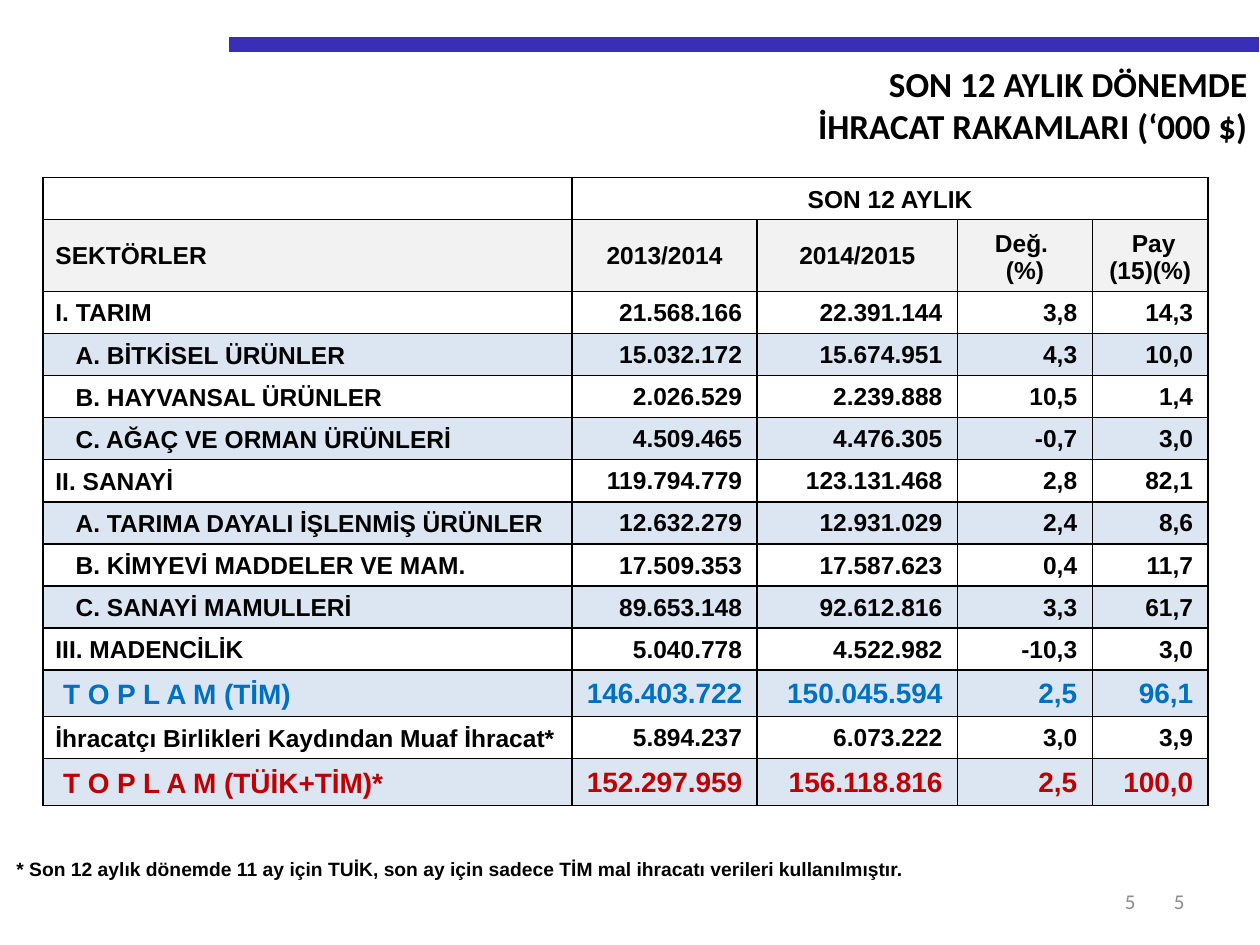
from dataclasses import dataclass

from lxml import etree
from pptx import Presentation
from pptx.dml.color import RGBColor
from pptx.enum.shapes import MSO_CONNECTOR
from pptx.enum.text import MSO_ANCHOR, PP_ALIGN
from pptx.oxml.ns import qn
from pptx.util import Inches, Pt

LEFT, CENTER, RIGHT = PP_ALIGN.LEFT, PP_ALIGN.CENTER, PP_ALIGN.RIGHT
TOP, MIDDLE, BOTTOM = MSO_ANCHOR.TOP, MSO_ANCHOR.MIDDLE, MSO_ANCHOR.BOTTOM
STRAIGHT = MSO_CONNECTOR.STRAIGHT

COLORS = {
    "text": "000000",
    "bar": "382EB8",
    "page_number": "8C8C8C",
    "white": "FFFFFF",
    "header": "F2F2F2",
    "band": "DCE6F2",
    "total_tim": "0070C0",
    "total_tuik": "C00000",
}

COLUMN_WIDTHS = [4.2, 1.47, 1.59, 1.07, 0.92]
TABLE_HEIGHT, HEADER_HEIGHT, TOTAL_HEIGHT = 4.97, 0.57, 0.37
LABEL_MARGINS = (0.1, 0.05, 0.1, 0.05)
VALUE_MARGINS = (0.01, 0.01, 0.12, 0)
NOTE_MARGINS = (0.01, 0.01, 0.01, 0)


@dataclass(frozen=True)
class SectorRow:
    label: str
    values: str
    indent: float = 0
    size: int = 14
    color: str = "text"


SUB_INDENT, TOTAL_INDENT = 0.16, 0.06
HEADINGS = ["SEKTÖRLER", "2013/2014", "2014/2015", "Değ. \n(%)", " Pay\n(15)(%)"]
SECTORS = [
    SectorRow("I. TARIM", "21.568.166 22.391.144 3,8 14,3"),
    SectorRow("A. BİTKİSEL ÜRÜNLER", "15.032.172 15.674.951 4,3 10,0", SUB_INDENT),
    SectorRow("B. HAYVANSAL ÜRÜNLER", "2.026.529 2.239.888 10,5 1,4", SUB_INDENT),
    SectorRow("C. AĞAÇ VE ORMAN ÜRÜNLERİ", "4.509.465 4.476.305 -0,7 3,0", SUB_INDENT),
    SectorRow("II. SANAYİ", "119.794.779 123.131.468 2,8 82,1"),
    SectorRow("A. TARIMA DAYALI İŞLENMİŞ ÜRÜNLER", "12.632.279 12.931.029 2,4 8,6", SUB_INDENT),
    SectorRow("B. KİMYEVİ MADDELER VE MAM.", "17.509.353 17.587.623 0,4 11,7", SUB_INDENT),
    SectorRow("C. SANAYİ MAMULLERİ", "89.653.148 92.612.816 3,3 61,7", SUB_INDENT),
    SectorRow("III. MADENCİLİK", "5.040.778 4.522.982 -10,3 3,0"),
    SectorRow("T O P L A M (TİM)", "146.403.722 150.045.594 2,5 96,1",
              TOTAL_INDENT, 16, "total_tim"),
    SectorRow("İhracatçı Birlikleri Kaydından Muaf İhracat*", "5.894.237 6.073.222 3,0 3,9"),
    SectorRow("T O P L A M (TÜİK+TİM)*", "152.297.959 156.118.816 2,5 100,0",
              TOTAL_INDENT, 16, "total_tuik"),
]


def rgb(name: str) -> RGBColor:
    return RGBColor.from_string(COLORS[name])


def write_text(frame, text: str, *, size: int = 14, font: str = "Arial",
               color: str = "text", bold: bool = True, align=LEFT) -> None:
    """Write one paragraph for each line of text."""
    for index, line in enumerate(text.split("\n")):
        para = frame.paragraphs[0] if index == 0 else frame.add_paragraph()
        para.alignment = align
        para.font.size = Pt(size)
        if line:
            span = para.add_run()
            span.text = line
            span.font.name = font
            span.font.size = Pt(size)
            span.font.bold = bold
            span.font.color.rgb = rgb(color)


def add_text(page, text: str, left: float, top: float, width: float, height: float,
             *, anchor=TOP, **text_format) -> None:
    box = page.shapes.add_textbox(Inches(left), Inches(top), Inches(width), Inches(height))
    box.text_frame.word_wrap = True
    box.text_frame.vertical_anchor = anchor
    write_text(box.text_frame, text, font="Calibri", align=RIGHT, **text_format)


def add_border(cell) -> None:
    properties = cell._tc.get_or_add_tcPr()
    for side in ("lnL", "lnR", "lnT", "lnB"):
        line = etree.SubElement(properties, qn(f"a:{side}"), w=str(Pt(1)))
        fill = etree.SubElement(line, qn("a:solidFill"))
        etree.SubElement(fill, qn("a:srgbClr"), val=COLORS["text"])


def fill_cell(cell, text: str, *, background: str = "white", anchor=MIDDLE,
              margins=LABEL_MARGINS, indent: float = 0, border: bool = True,
              **text_format) -> None:
    if border:
        add_border(cell)
    cell.fill.solid()
    cell.fill.fore_color.rgb = rgb(background)
    cell.vertical_anchor = anchor
    left, top, right, bottom = margins
    cell.margin_left, cell.margin_top = Inches(left + indent), Inches(top)
    cell.margin_right, cell.margin_bottom = Inches(right), Inches(bottom)
    write_text(cell.text_frame, text, **text_format)


def add_table(page, left: float, top: float, widths: list[float], heights: list[float]):
    table = page.shapes.add_table(
        len(heights), len(widths), Inches(left), Inches(top),
        Inches(sum(widths)), Inches(sum(heights))).table
    table.first_row = table.horz_banding = False
    for column, width in zip(table.columns, widths):
        column.width = Inches(width)
    for row, height in zip(table.rows, heights):
        row.height = Inches(height)
    return table


def add_export_table(page) -> None:
    total_count = sum(sector.size == 16 for sector in SECTORS)
    plain_count = len(SECTORS) - total_count + 1
    plain_height = (TABLE_HEIGHT - HEADER_HEIGHT - total_count * TOTAL_HEIGHT) / plain_count
    heights = [plain_height, HEADER_HEIGHT] + [
        TOTAL_HEIGHT if sector.size == 16 else plain_height for sector in SECTORS]
    table = add_table(page, 0.34, 1.41, COLUMN_WIDTHS, heights)

    table.cell(0, 1).merge(table.cell(0, len(COLUMN_WIDTHS) - 1))
    for column in range(len(COLUMN_WIDTHS)):
        fill_cell(table.cell(0, column), "SON 12 AYLIK" if column == 1 else "",
                  anchor=BOTTOM, align=CENTER)
    for column, heading in enumerate(HEADINGS):
        fill_cell(table.cell(1, column), heading, background="header",
                  anchor=BOTTOM if "\n" in heading else MIDDLE,
                  align=CENTER if column else LEFT)
    for index, sector in enumerate(SECTORS):
        shared = {"background": "band" if index % 2 else "white",
                  "size": sector.size, "color": sector.color}
        fill_cell(table.cell(index + 2, 0), sector.label, anchor=BOTTOM,
                  indent=sector.indent, **shared)
        for column, value in enumerate(sector.values.split(), start=1):
            fill_cell(table.cell(index + 2, column), value, margins=VALUE_MARGINS,
                      align=RIGHT, **shared)


def add_footnote(page) -> None:
    table = add_table(page, 0.12, 6.74, [7.4], [0.31, 0.31])
    note = ("* Son 12 aylık dönemde 11 ay için TUİK, son ay için sadece TİM "
            "mal ihracatı verileri kullanılmıştır.")
    for row, text in enumerate([note, ""]):
        fill_cell(table.cell(row, 0), text, margins=NOTE_MARGINS, border=False, size=11)


def add_top_bar(page) -> None:
    bar = page.shapes.add_connector(
        STRAIGHT, Inches(1.82), Inches(0.35), Inches(9.99), Inches(0.35))
    bar.line.color.rgb = rgb("bar")
    bar.line.width = Pt(8.5)
    etree.SubElement(bar._element.spPr, qn("a:effectLst"))


def main() -> None:
    deck = Presentation()
    deck.slide_width, deck.slide_height = Inches(10), Inches(7.5)
    page = deck.slides.add_slide(deck.slide_layouts[6])
    add_top_bar(page)
    add_text(page, "SON 12 AYLIK DÖNEMDE\nİHRACAT RAKAMLARI (‘000 $)",
             1.06, 0.45, 8.94, 0.77, size=20)
    add_export_table(page)
    add_footnote(page)
    for left, width in ((7.17, 2.33), (7.01, 2.1)):
        add_text(page, "5", left, 6.95, width, 0.4, anchor=MIDDLE,
                 size=12, color="page_number", bold=False)
    deck.save("out.pptx")


if __name__ == "__main__":
    main()
